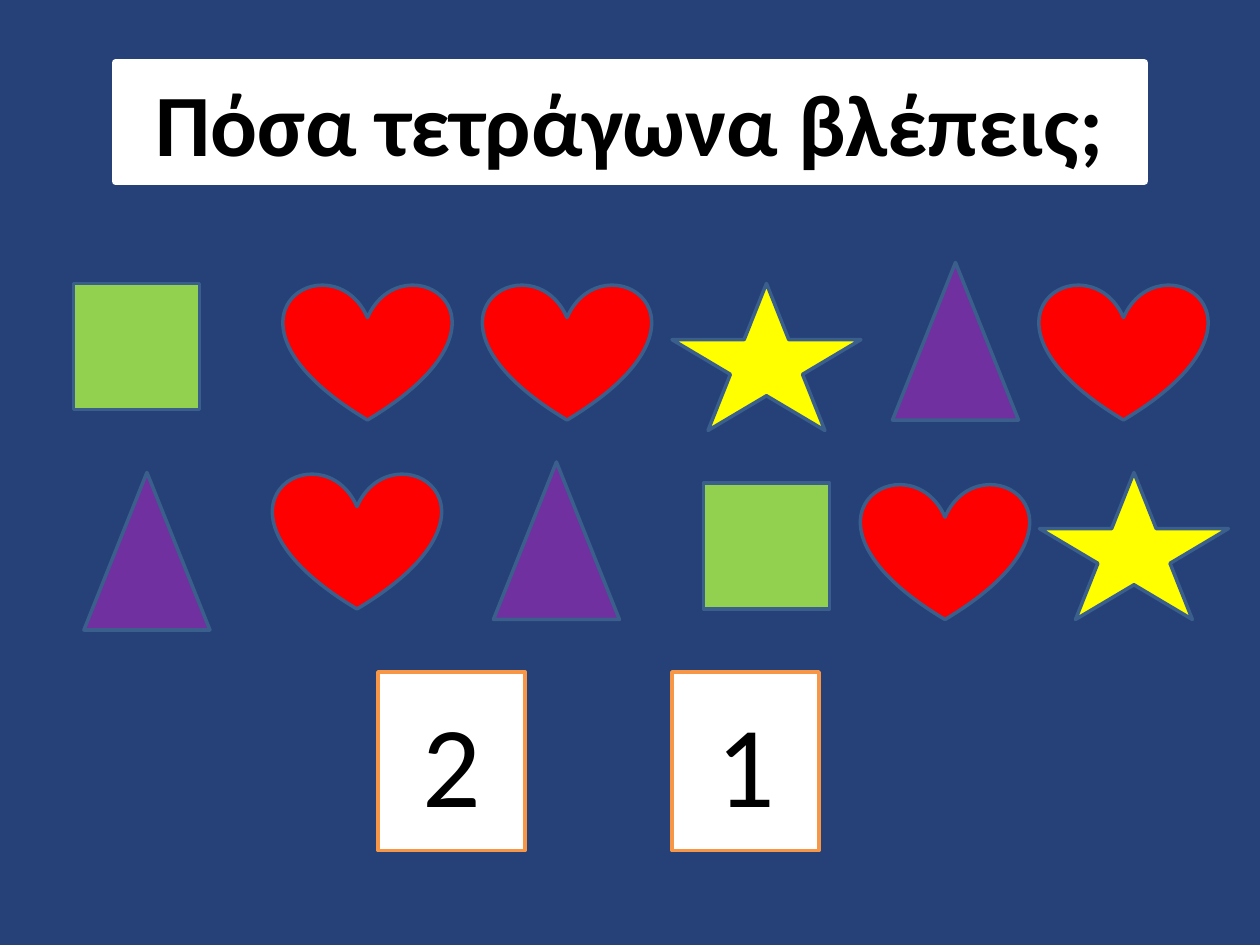
"""Build a counting quiz slide: how many squares are among the shapes?"""
from pptx import Presentation
from pptx.dml.color import RGBColor
from pptx.enum.shapes import MSO_SHAPE as Preset
from pptx.enum.text import MSO_ANCHOR as Anchor, MSO_AUTO_SIZE as AutoSize, PP_ALIGN as Align
from pptx.util import Pt

PX = 9525
NAVY = RGBColor(0x26, 0x41, 0x77)
WHITE = RGBColor(0xFF, 0xFF, 0xFF)
BLACK = RGBColor(0x00, 0x00, 0x00)
RED = RGBColor(0xFF, 0x00, 0x00)
PURPLE = RGBColor(0x70, 0x30, 0xA0)
YELLOW = RGBColor(0xFF, 0xFF, 0x00)
GREEN = RGBColor(0x92, 0xD0, 0x50)
STEEL = RGBColor(0x3A, 0x5F, 0x8C)
ORANGE = RGBColor(0xF7, 0x96, 0x46)


def paint(figure, fill, outline, weight):
    figure.fill.solid()
    figure.fill.fore_color.rgb = fill
    figure.line.color.rgb = outline
    figure.line.width = Pt(weight)


def write(figure, words, frame_format, font_format):
    frame = figure.text_frame
    frame.text = words
    for key, value in frame_format.items():
        setattr(frame, key, value)
    line = frame.paragraphs[0]
    line.alignment = Align.CENTER
    font = line.runs[0].font
    for key, value in font_format.items():
        setattr(font, key, value)
    font.color.rgb = BLACK


deck = Presentation()
deck.slide_width, deck.slide_height = 960 * PX, 720 * PX
slide = deck.slides.add_slide(deck.slide_layouts[5])
slide.background.fill.solid()
slide.background.fill.fore_color.rgb = NAVY

question = slide.shapes.title
place = {"left": 88, "top": 48, "width": 784, "height": 90}
for side, length in place.items():
    setattr(question, side, length * PX)
paint(question, WHITE, WHITE, 4.5)
write(question, "Πόσα τετράγωνα βλέπεις;",
      {"word_wrap": True, "auto_size": AutoSize.SHAPE_TO_FIT_TEXT, "vertical_anchor": Anchor.TOP},
      {"name": "Calibri", "size": Pt(50), "bold": True})

kinds = {
    "square": (Preset.RECTANGLE, 96, 96, GREEN),
    "heart": (Preset.HEART, 128, 104, RED),
    "star": (Preset.STAR_5_POINT, 144, 112, YELLOW),
    "triangle": (Preset.ISOSCELES_TRIANGLE, 96, 120, PURPLE),
}
figures = [
    ("square", 56, 216), ("heart", 216, 216), ("heart", 368, 216),
    ("star", 512, 216), ("triangle", 680, 200), ("heart", 792, 216),
    ("triangle", 64, 360), ("heart", 208, 360), ("triangle", 376, 352),
    ("square", 536, 368), ("heart", 656, 368), ("star", 792, 360),
]
for kind, left, top in figures:
    preset, width, height, color = kinds[kind]
    figure = slide.shapes.add_shape(preset, left * PX, top * PX, width * PX, height * PX)
    figure.shadow.inherit = False
    paint(figure, color, STEEL, 2)

for answer, left in (("2", 288), ("1", 512)):
    card = slide.shapes.add_shape(Preset.RECTANGLE, left * PX, 512 * PX, 112 * PX, 136 * PX)
    card.shadow.inherit = False
    paint(card, WHITE, ORANGE, 2)
    write(card, answer, {"word_wrap": True, "vertical_anchor": Anchor.MIDDLE},
          {"name": "Calibri", "size": Pt(66)})

deck.save("out.pptx")
